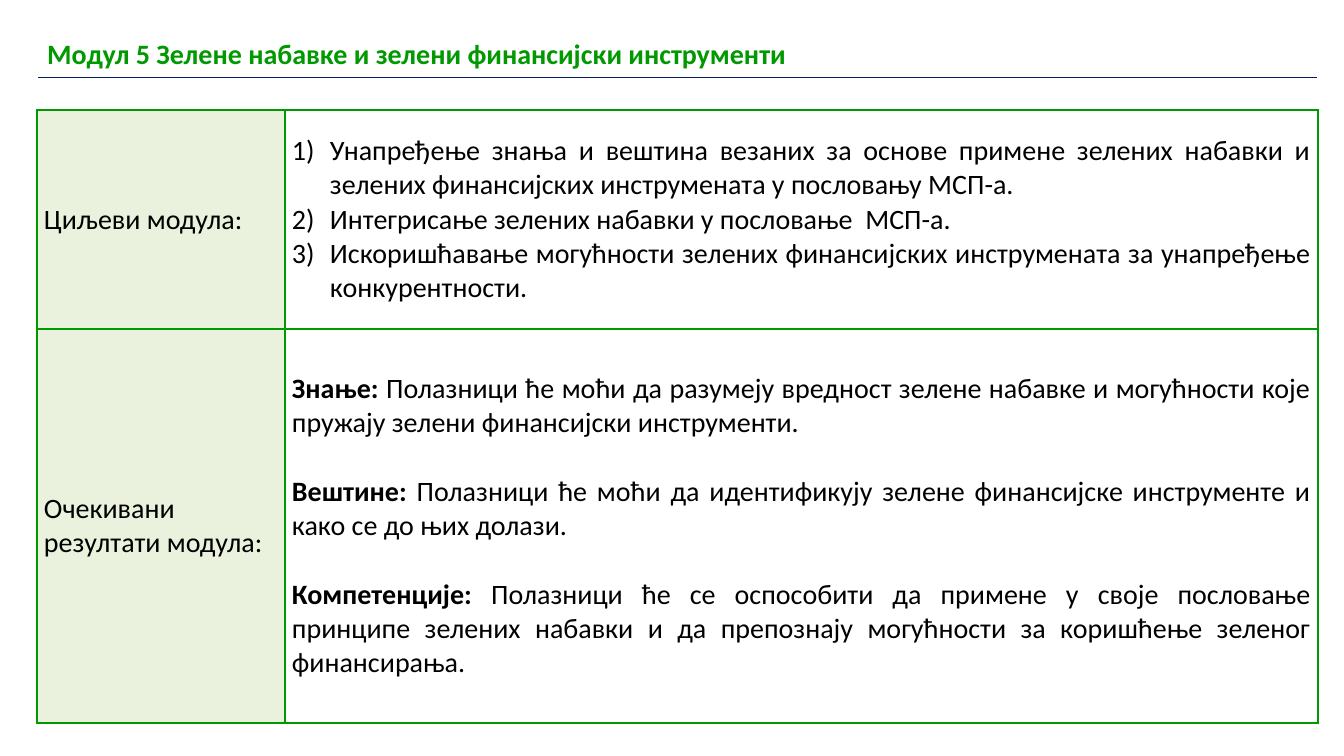
from lxml import etree
from pptx import Presentation
from pptx import util as u
from pptx.dml.color import RGBColor
from pptx.enum import text
from pptx.oxml.ns import qn

GREEN = RGBColor(0x00, 0x99, 0x00)
NAVY = RGBColor(0x00, 0x20, 0x60)
PALE_GREEN = RGBColor(0xEA, 0xF1, 0xDD)
BLACK = RGBColor(0, 0, 0)
WHITE = RGBColor(255, 255, 255)

HEADING = "Модул 5 Зелене набавке и зелени финансијски инструменти"
GOALS_LABEL = "Циљеви модула:"
GOALS = [
    "Унапређење знања и вештина везаних за основе примене зелених набавки и зелених "
    "финансијских инструмената у пословању МСП-а.",
    "Интегрисање зелених набавки у пословање  МСП-а.",
    "Искоришћавање могућности зелених финансијских инструмената за унапређење конкурентности.",
]
RESULTS_LABEL = "Очекивани резултати модула:"
RESULTS = [
    ("Знање:", " Полазници ће моћи да разумеју вредност зелене набавке и могућности "
               "које пружају зелени финансијски инструменти."),
    ("Вештине:", " Полазници ће моћи да идентификују зелене финансијске инструменте "
                 "и како се до њих долази."),
    ("Компетенције:", " Полазници ће се оспособити да примене у своје пословање принципе "
                      "зелених набавки и да препознају могућности за коришћење зеленог "
                      "финансирања."),
]

SLIDE_SIZE = (1344, 756)
LEFT = 37
HEADING_TOP, HEADING_ROWS, HEADING_COLUMNS = 33, [43], [1281]
MODULE_TOP, MODULE_ROWS, MODULE_COLUMNS = 110, [219, 394], [248, 1033]
CELL_INSET = 7
NUMBER_INDENT = 38
RESULT_GAP = u.Pt(24.4)
FONT, FONT_SIZE = "Calibri", u.Pt(20)


def px(length):
    return u.Emu(round(length * 914400 / 100.8))


def add_grid(page, top, columns, rows):
    frame = page.shapes.add_table(len(rows), len(columns), px(LEFT), px(top),
                                  px(sum(columns)), px(sum(rows)))
    table = frame.table
    table.first_row = table.horz_banding = False
    for column, width in zip(table.columns, columns):
        column.width = px(width)
    for row, height in zip(table.rows, rows):
        row.height = px(height)
    return table


def set_borders(cell, left, right, top, bottom):
    properties = cell._tc.get_or_add_tcPr()
    for side, color in zip("LRTB", (left, right, top, bottom)):
        line = etree.SubElement(properties, qn(f"a:ln{side}"), w=str(u.Pt(1)))
        fill = etree.SubElement(line, qn("a:solidFill"))
        etree.SubElement(fill, qn("a:srgbClr"), val=str(color))


def write_cell(cell, paragraphs, color=BLACK, align=text.PP_ALIGN.JUSTIFY):
    """Fill a cell with paragraphs, each a list of (wording, bold) spans."""
    frame = cell.text_frame
    for index, spans in enumerate(paragraphs):
        para = frame.add_paragraph() if index else frame.paragraphs[0]
        para.alignment = align
        for wording, bold in spans:
            span = para.add_run()
            span.text = wording
            span.font.name, span.font.size = FONT, FONT_SIZE
            span.font.bold = bold
            span.font.color.rgb = color


def number_paragraphs(cell):
    for para in cell.text_frame.paragraphs:
        properties = para._p.get_or_add_pPr()
        properties.set("marL", str(px(NUMBER_INDENT)))
        properties.set("indent", str(-px(NUMBER_INDENT)))
        etree.SubElement(properties, qn("a:buFont"), typeface="+mj-lt")
        etree.SubElement(properties, qn("a:buAutoNum"), type="arabicParenR")


def add_heading(page):
    cell = add_grid(page, HEADING_TOP, HEADING_COLUMNS, HEADING_ROWS).cell(0, 0)
    set_borders(cell, WHITE, WHITE, WHITE, NAVY)
    cell.fill.background()
    write_cell(cell, [[(HEADING, True)]], GREEN, text.PP_ALIGN.LEFT)


def add_module_table(page):
    table = add_grid(page, MODULE_TOP, MODULE_COLUMNS, MODULE_ROWS)
    for cell in table.iter_cells():
        set_borders(cell, GREEN, GREEN, GREEN, GREEN)
        cell.fill.background()
        cell.vertical_anchor = text.MSO_ANCHOR.MIDDLE
        cell.margin_left = cell.margin_right = px(CELL_INSET)
        cell.margin_top = cell.margin_bottom = 0

    for row, label in enumerate([GOALS_LABEL, RESULTS_LABEL]):
        label_cell = table.cell(row, 0)
        label_cell.fill.solid()
        label_cell.fill.fore_color.rgb = PALE_GREEN
        write_cell(label_cell, [[(label, False)]])

    goals, results = table.cell(0, 1), table.cell(1, 1)
    write_cell(goals, [[(goal, False)] for goal in GOALS])
    number_paragraphs(goals)
    write_cell(results, [[(name, True), (detail, False)] for name, detail in RESULTS])
    for para in results.text_frame.paragraphs[1:]:
        para.space_before = RESULT_GAP


def main():
    deck = Presentation()
    deck.slide_width, deck.slide_height = map(px, SLIDE_SIZE)
    page = deck.slides.add_slide(deck.slide_layouts[6])
    add_heading(page)
    add_module_table(page)
    deck.save("out.pptx")


if __name__ == "__main__":
    main()
